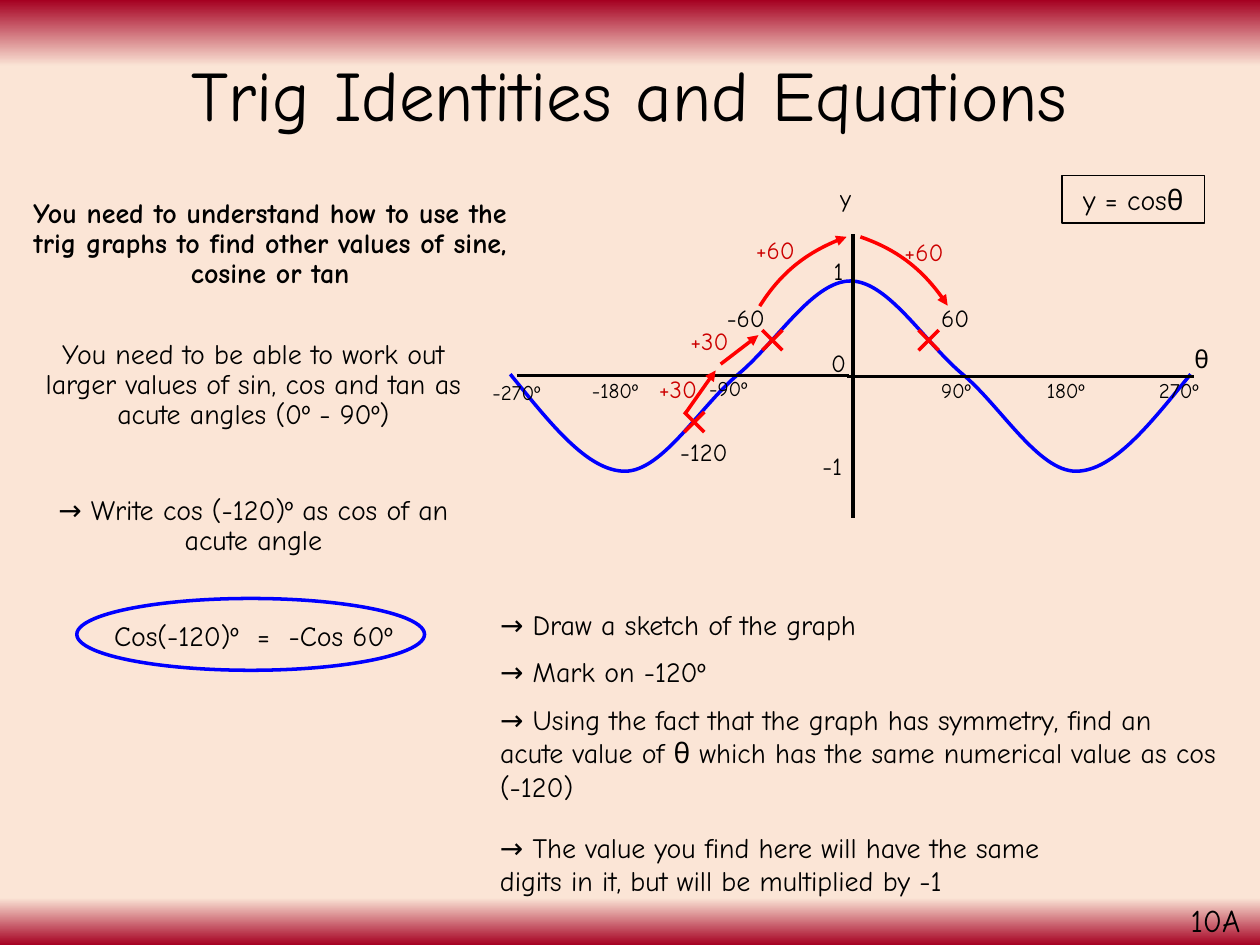
from copy import deepcopy

from pptx import Presentation
from pptx import util as u
from pptx.dml.color import RGBColor
from pptx.enum import shapes, text
from pptx.oxml import parse_xml
from pptx.oxml.ns import nsdecls, qn

FONT = "Comic Neue"
BLACK, BLUE, RED, DARK = "000000", "0000FF", "FF0000", "CC0000"
LEFT, MID = text.PP_ALIGN.LEFT, text.PP_ALIGN.CENTER


def hue(code):
    return RGBColor.from_string(code)


def tag(name, attrs=""):
    return parse_xml(f"<a:{name} {nsdecls('a')} {attrs}/>")


def fill_text(frame, paras, size, color=BLACK, align=LEFT, bold=False, gap=None, lead=None):
    for i, words in enumerate(paras):
        para = frame.paragraphs[0] if i == 0 else frame.add_paragraph()
        para.alignment = align
        if lead:
            para.line_spacing = lead
        if i:
            para.space_before = u.Pt(size / 2 if gap is None else gap)
        run = para.add_run()
        run.text = words
        run.font.name = FONT
        run.font.size = u.Pt(size)
        run.font.bold = bold
        run.font.color.rgb = hue(color)


def label(page, box, paras, size, wrap=True, **style):
    frame = page.add_textbox(*map(u.Inches, box)).text_frame
    frame.word_wrap = wrap
    fill_text(frame, paras, size, **style)
    return frame


def edge(shape, color, width=2):
    shape.line.color.rgb = hue(color)
    shape.line.width = u.Pt(width)


def clear(shape, color, width=2):
    shape.shadow.inherit = False
    shape.fill.background()
    edge(shape, color, width)
    return shape


def tip(shape):
    line = shape.element.spPr.find(qn("a:ln"))
    line.append(tag("tailEnd", 'type="triangle"'))


def rule(page, ends, color, arrow=False):
    line = page.add_connector(shapes.MSO_CONNECTOR.STRAIGHT, *map(u.Inches, ends))
    edge(line, color)
    if arrow:
        tip(line)
    line.element.spPr.append(tag("effectLst"))


def curve(page, knots, color, hub=None):
    dots = [tuple(map(u.Inches, dot)) for dot in (*knots, *([hub] if hub else []))]
    pen = page.build_freeform(*dots[0], scale=1.0)
    pen.add_line_segments(dots[1:], close=bool(hub))
    shape = clear(pen.convert_to_shape(), color)
    route = shape.element.find(".//" + qn("a:path"))
    legs = route.findall(qn("a:lnTo"))
    for i in range(0, len(knots) - 1, 3):
        bow = tag("cubicBezTo")
        legs[i].addprevious(bow)
        for leg in legs[i:i + 3]:
            bow.append(leg[0])
            route.remove(leg)
    if hub:
        arc = deepcopy(route)
        for part in arc[-2:]:
            arc.remove(part)
        arc.set("fill", "none")
        route.set("stroke", "0")
        route.addprevious(arc)
    return shape


def cross(page, x, y, half=0.08):
    group = page.add_group_shape().shapes
    for d in (half, -half):
        rule(group, (x - half, y - d, x + half, y + d), RED)


def sweep(page, x, y, turn):
    knots = [(x + a, y + b) for a, b in ((0, 0.55), (0.17, 0.28), (0.41, 0.1), (0.69, 0))]
    shape = curve(page, knots, RED, hub=(x + 1.07, y + 1.44))
    shape.rotation = turn
    tip(shape)


def backdrop(slide):
    fill = slide.background.fill
    fill.gradient()
    fill.gradient_angle = 270
    stops = slide.element.find(".//" + qn("a:gsLst"))
    for old in list(stops):
        stops.remove(old)
    for pos, code in ((0, "A50021"), (7, "FBE5D6"), (95, "FBE5D6"), (100, "A50021")):
        stop = tag("gs", f'pos="{pos * 1000}"')
        stop.append(tag("srgbClr", f'val="{code}"'))
        stops.append(stop)


def title(page, box):
    frame = label(page, box, ["Trig Identities and Equations"], 40.5, align=MID, lead=0.9)
    frame.vertical_anchor = text.MSO_ANCHOR.MIDDLE


def task(page, x, y):
    label(page, (x + 0.16, y, 3.97, 5.22),
          ["You need to understand how to use the trig graphs to find other values "
           "of sine, cosine or tan"], 16, align=MID, bold=True, lead=0.9)
    frame = label(page, (x - 0.16, y + 1.12, 4.09, 4.04),
                  ["You need to be able to work out larger values of sin, cos and tan as "
                   "acute angles (0º - 90º)",
                   "→ Write cos (-120)º as cos of an acute angle",
                   "Cos(-120)º  =  -Cos 60º"], 16, align=MID, gap=37.5, lead=0.9)
    frame.margin_left = u.Inches(0.35)
    clear(page.add_shape(shapes.MSO_SHAPE.OVAL,
                         *map(u.Inches, (x + 0.61, y + 3.22, 2.76, 0.57))), BLUE)


def graph(page, x, y):
    def ends(a, b, c, d):
        return x + a, y + b, x + c, y + d

    half = ((0.05, 1.97), (0.36, 2.35), (0.66, 2.74), (0.96, 2.74), (1.26, 2.74),
            (1.56, 2.22), (1.86, 1.97), (2.16, 1.72), (2.45, 1.23), (2.75, 1.23))
    back = [(5.5 - a, b) for a, b in half[-2::-1]]
    curve(page, [(x + a, y + b) for a, b in (*half, *back)], BLUE)

    for line in ((0.1, 1.98, 2.74, 1.98), (2.72, 1.99, 5.48, 1.99), (2.77, 0.86, 2.77, 3.11)):
        rule(page, ends(*line), BLACK)

    marks = (
        ("-270º", -0.19, 1.96, 0.76, 12, BLACK, LEFT),
        ("-180º", 0.6, 1.95, 0.87, 12, BLACK, LEFT),
        ("-90º", 1.53, 1.93, 0.74, 12, BLACK, LEFT),
        ("90º", 3.37, 1.95, 0.65, 12, BLACK, LEFT),
        ("180º", 4.21, 1.95, 0.74, 12, BLACK, LEFT),
        ("270º", 5.1, 1.95, 0.9, 12, BLACK, LEFT),
        ("y", 2.57, 0.4, 0.41, 14, BLACK, LEFT),
        ("θ", 5.38, 1.68, 0.41, 14, BLACK, LEFT),
        ("1", 2.43, 0.98, 0.45, 14, BLACK, MID),
        ("0", 2.43, 1.71, 0.45, 14, BLACK, MID),
        ("-1", 2.33, 2.53, 0.55, 14, BLACK, MID),
        ("-120", 1.3, 2.42, 0.65, 14, BLACK, LEFT),
        ("-60", 1.67, 1.36, 0.58, 14, BLACK, LEFT),
        ("60", 3.37, 1.36, 0.58, 14, BLACK, LEFT),
        ("+30", 1.13, 1.92, 0.58, 14, DARK, LEFT),
        ("+30", 1.38, 1.54, 0.58, 14, DARK, LEFT),
        ("+60", 1.9, 0.82, 0.58, 14, DARK, LEFT),
        ("+60", 3.08, 0.83, 0.58, 14, DARK, LEFT),
    )
    for words, a, b, wide, size, color, align in marks:
        tall = 0.3 if size == 12 else 0.33
        label(page, (x + a, y + b, wide, tall), [words], size, color=color, align=align)

    for a, b in ((1.51, 2.35), (2.13, 1.7), (3.37, 1.7)):
        cross(page, x + a, y + b)

    sweep(page, x + 2.03, y + 0.88, 0)
    sweep(page, x + 2.25, y + 0.72, 76.8)
    for line in ((1.44, 2.28, 1.68, 1.94), (1.72, 1.89, 2.02, 1.66)):
        rule(page, ends(*line), RED, arrow=True)

    rect = clear(page.add_shape(shapes.MSO_SHAPE.RECTANGLE,
                                *map(u.Inches, (x + 4.43, y + 0.39, 1.13, 0.38))), BLACK, 0.75)
    fill_text(rect.text_frame, ["y = cosθ"], 16, align=MID)


def steps(page, x, y):
    label(page, (x, y, 5.89, 1.7),
          ["→ Draw a sketch of the graph", "→ Mark on -120º",
           "→ Using the fact that the graph has symmetry, find an acute value of θ "
           "which has the same numerical value as cos (-120)"], 16)
    label(page, (x, y + 1.77, 4.73, 0.64),
          ["→ The value you find here will have the same digits in it, but will be "
           "multiplied by -1"], 16)


def main():
    deck = Presentation()
    deck.slide_width, deck.slide_height = u.Inches(10), u.Inches(7.5)
    slide = deck.slides.add_slide(deck.slide_layouts[6])
    page = slide.shapes
    backdrop(slide)
    title(page, (0.69, 0.24, 8.62, 1.09))
    task(page, 0, 1.53)
    graph(page, 4, 1)
    steps(page, 3.87, 4.77)
    label(page, (9.35, 7.1, 0.65, 0.4), ["10A"], 18, wrap=False)
    deck.save("out.pptx")


if __name__ == "__main__":
    main()
